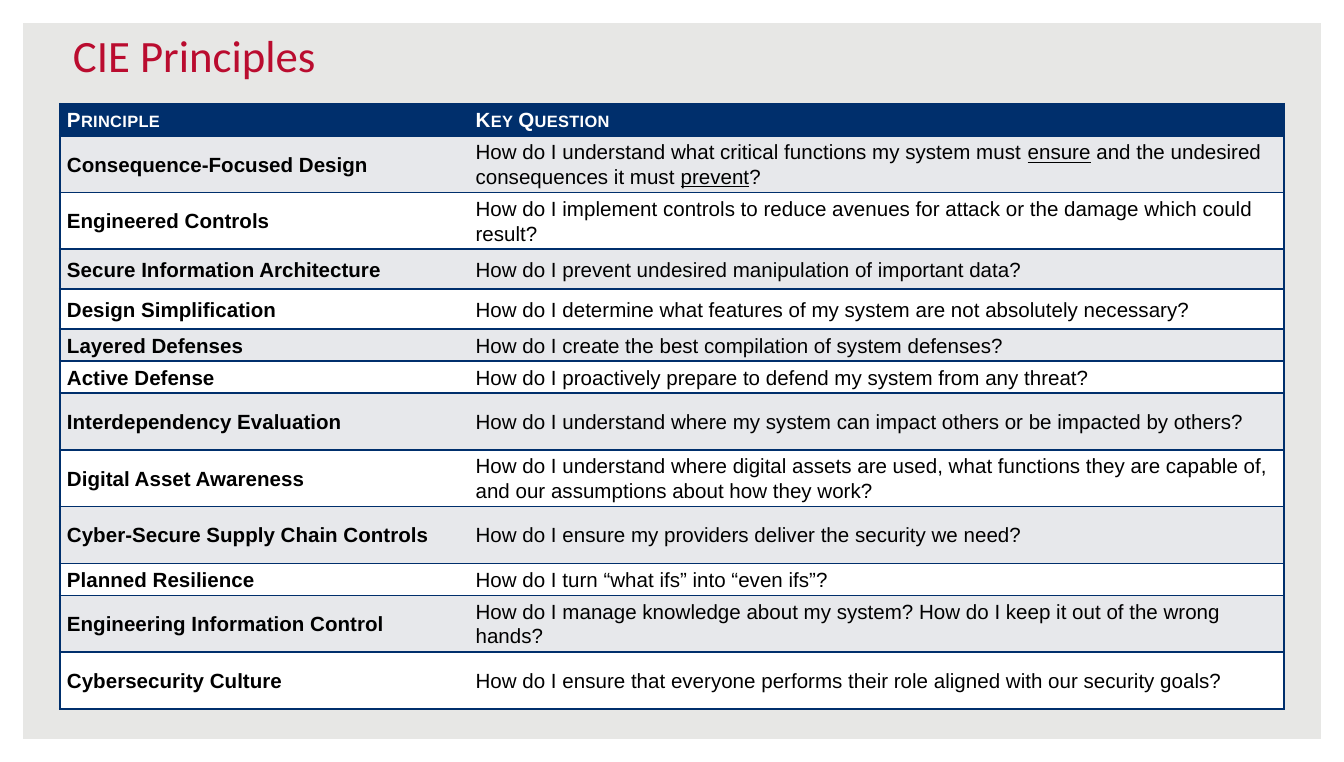
from lxml.etree import SubElement
from pptx import Presentation
from pptx.dml.color import RGBColor
from pptx.enum.shapes import MSO_SHAPE
from pptx.enum.text import MSO_ANCHOR
from pptx.oxml.ns import qn
from pptx.util import Pt

# Content: underlined words stand between underscores
TITLE = "CIE Principles"
HEADINGS = ("Principle", "Key Question")
TALL, MEDIUM, LOW = 30.4, 21.4, 17.2
PRINCIPLES = [
    ("Consequence-Focused Design",
     "How do I understand what critical functions my system must _ensure_ "
     "and the undesired consequences it must _prevent_?", TALL),
    ("Engineered Controls",
     "How do I implement controls to reduce avenues for attack or the damage "
     "which could result?", TALL),
    ("Secure Information Architecture",
     "How do I prevent undesired manipulation of important data?", MEDIUM),
    ("Design Simplification",
     "How do I determine what features of my system are not absolutely necessary?",
     MEDIUM),
    ("Layered Defenses",
     "How do I create the best compilation of system defenses?", LOW),
    ("Active Defense",
     "How do I proactively prepare to defend my system from any threat?", LOW),
    ("Interdependency Evaluation",
     "How do I understand where my system can impact others or be impacted by others?",
     TALL),
    ("Digital Asset Awareness",
     "How do I understand where digital assets are used, what functions they are "
     "capable of, and our assumptions about how they work?", TALL),
    ("Cyber-Secure Supply Chain Controls",
     "How do I ensure my providers deliver the security we need?", TALL),
    ("Planned Resilience", "How do I turn “what ifs” into “even ifs”?", LOW),
    ("Engineering Information Control",
     "How do I manage knowledge about my system? How do I keep it out of the "
     "wrong hands?", TALL),
    ("Cybersecurity Culture",
     "How do I ensure that everyone performs their role aligned with our "
     "security goals?", TALL),
]

THEME = {
    "background": "E7E7E5", "frame": "FFFFFF", "title": "BA0C2F",
    "navy": "002F6C", "heading": "FFFFFF", "body": "000000",
    "bands": ("E7E8EB", "FFFFFF"),
    "title_font": "Calibri", "table_font": "Arial",
    "title_size": 24, "table_size": 11,
}
WIDTH, HEIGHT = 720, 408.24
COLUMNS = (218.9, 437.1)


def color(name):
    return RGBColor.from_string(name)


def style_font(font, face, size, fill, bold=False):
    font.name, font.size, font.bold = face, Pt(size), bold
    font.color.rgb = color(fill)


def add_borders(cell, visible):
    """Rule the visible sides in navy and clear the others."""
    properties = cell._tc.get_or_add_tcPr()
    for side in "LRTB":
        line = SubElement(properties, qn(f"a:ln{side}"), w=str(Pt(1)))
        if side in visible:
            fill = SubElement(line, qn("a:solidFill"))
            SubElement(fill, qn("a:srgbClr"), val=THEME["navy"])
        else:
            SubElement(line, qn("a:noFill"))


def fill_cell(cell, text, fill, text_color, bold, sides):
    add_borders(cell, sides)
    cell.fill.solid()
    cell.fill.fore_color.rgb = color(fill)
    cell.margin_left, cell.margin_right = Pt(3.9), Pt(3.6)
    cell.margin_top = cell.margin_bottom = Pt(1)
    paragraph = cell.text_frame.paragraphs[0]
    paragraph.line_spacing = 1.07
    for index, part in enumerate(text.split("_")):
        run = paragraph.add_run()
        run.text = part
        style_font(run.font, THEME["table_font"], THEME["table_size"], text_color, bold)
        if index % 2:
            run.font.underline = True


presentation = Presentation()
presentation.slide_width, presentation.slide_height = Pt(WIDTH), Pt(HEIGHT)
slide = presentation.slides.add_slide(presentation.slide_layouts[6])

# Background and white frame
slide.background.fill.solid()
slide.background.fill.fore_color.rgb = color(THEME["background"])
frame = slide.shapes.add_shape(MSO_SHAPE.FRAME, 0, 0, Pt(WIDTH), Pt(HEIGHT))
frame.adjustments[0] = 0.03
frame.shadow.inherit = False
frame.fill.solid()
frame.fill.fore_color.rgb = color(THEME["frame"])
frame.line.fill.background()

# Title
title = slide.shapes.add_textbox(Pt(32), Pt(15.1), Pt(612), Pt(36)).text_frame
title.word_wrap = True
title.vertical_anchor = MSO_ANCHOR.BOTTOM
title.margin_left = title.margin_right = Pt(7.2)
title.margin_top = title.margin_bottom = Pt(7.2)
title.text = TITLE
style_font(title.paragraphs[0].runs[0].font, THEME["title_font"],
           THEME["title_size"], THEME["title"])

# Table of principles
heights = [LOW] + [height for _, _, height in PRINCIPLES]
table = slide.shapes.add_table(
    len(heights), len(COLUMNS), Pt(32), Pt(55.6),
    Pt(sum(COLUMNS)), Pt(sum(heights))).table
table.first_row = table.horz_banding = False
for column, width in zip(table.columns, COLUMNS):
    column.width = Pt(width)
for row, height in zip(table.rows, heights):
    row.height = Pt(height)

COLUMN_SIDES = ("LTB", "RTB")
for col, (heading, sides) in enumerate(zip(HEADINGS, COLUMN_SIDES)):
    cell = table.cell(0, col)
    fill_cell(cell, heading, THEME["navy"], THEME["heading"], True, sides)
    cell.margin_top = Pt(2)
    run_properties = cell.text_frame.paragraphs[0].runs[0].font._element
    run_properties.set("cap", "small")
    run_properties.set("spc", "20")

    for row, principle in enumerate(PRINCIPLES, start=1):
        cell = table.cell(row, col)
        fill_cell(cell, principle[col], THEME["bands"][(row - 1) % 2],
                  THEME["body"], col == 0, sides)
        cell.vertical_anchor = MSO_ANCHOR.MIDDLE

presentation.save("out.pptx")
